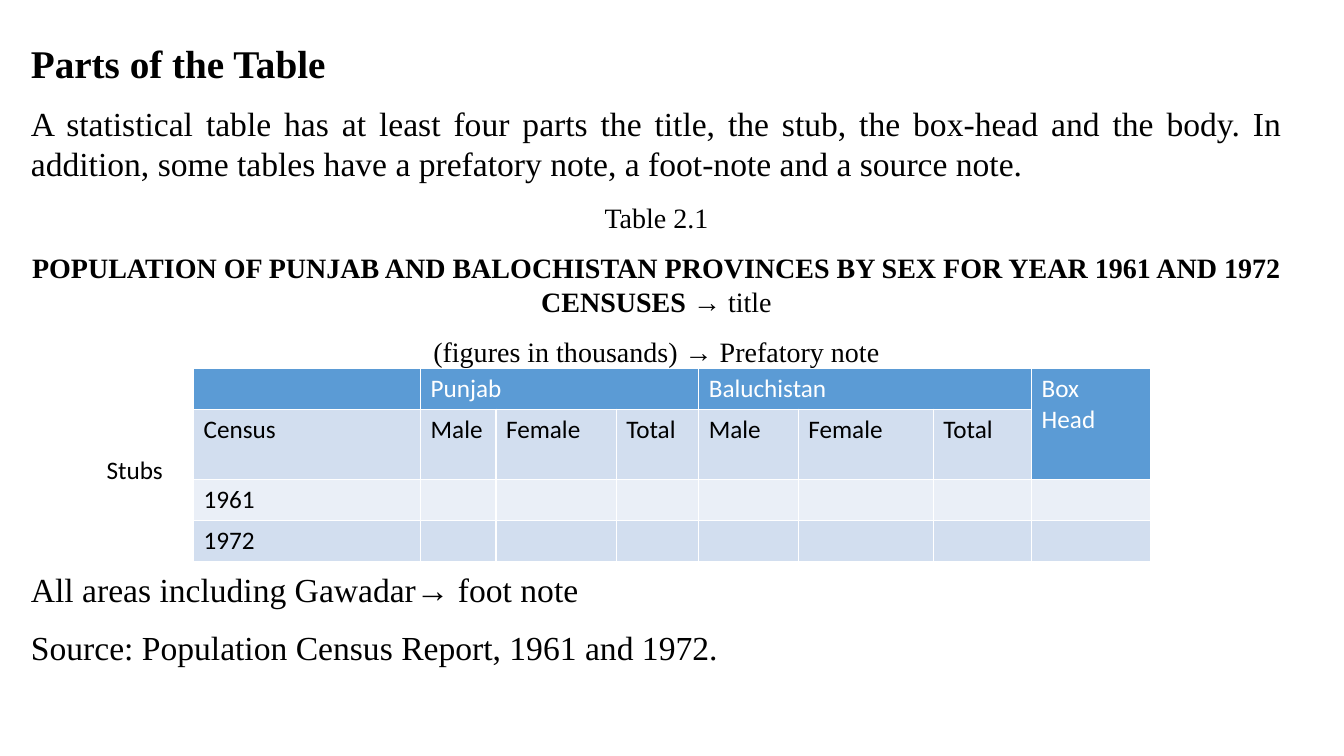
from pptx import Presentation
from pptx.dml.color import RGBColor
from pptx.enum.text import PP_ALIGN
from pptx.util import Cm, Pt

LEFT, CENTER, JUSTIFY = PP_ALIGN.LEFT, PP_ALIGN.CENTER, PP_ALIGN.JUSTIFY
BLACK = RGBColor(0x00, 0x00, 0x00)
WHITE = RGBColor(0xFF, 0xFF, 0xFF)
BLUE = RGBColor(0x5B, 0x9B, 0xD5)
BAND_DARK = RGBColor(0xD2, 0xDE, 0xEF)
BAND_LIGHT = RGBColor(0xEA, 0xEF, 0xF7)
SERIF, SANS = "Times New Roman", "Calibri"

COLUMN_WIDTHS = [5.72, 1.9, 3.03, 2.08, 2.51, 3.4, 2.48, 3.0]
ROW_HEIGHT = 1.03
SEXES = ["Male", "Female", "Total"]
CENSUS_ROWS = [
    ["", "Punjab", "", "", "Baluchistan", "", "", "Box\nHead"],
    ["Census", *SEXES, *SEXES, ""],
    ["1961"] + [""] * 7,
    ["1972"] + [""] * 7,
]
ROW_FILLS = [BLUE, BAND_DARK, BAND_LIGHT, BAND_DARK]
MERGES = [((0, 1), (0, 3)), ((0, 4), (0, 6)), ((0, 7), (1, 7))]


def add_run(p, text, font=SERIF, size=24, color=BLACK, bold=False):
    r = p.add_run()
    r.text = text
    r.font.name, r.font.size, r.font.bold = font, Pt(size), bold
    r.font.color.rgb = color


class SlideBuilder:
    def __init__(self, s, gap=6):
        self.s = s
        self.gap = Pt(gap)

    def text(self, x, y, w, h, paragraphs):
        """Each paragraph is (alignment, [(text, run format), ...])."""
        sp = self.s.shapes.add_textbox(Cm(x), Cm(y), Cm(w), Cm(h))
        tf = sp.text_frame
        tf.word_wrap = True
        for i, (align, runs) in enumerate(paragraphs):
            p = tf.add_paragraph() if i else tf.paragraphs[0]
            p.alignment = align
            p.space_before = self.gap if i else Pt(0)
            p.space_after = self.gap
            for text, style in runs:
                add_run(p, text, **style)

    def label(self, x, y, w, h, text):
        sp = self.s.shapes.add_textbox(Cm(x), Cm(y), Cm(w), Cm(h))
        sp.text_frame.word_wrap = True
        add_run(sp.text_frame.paragraphs[0], text, font=SANS, size=18)

    def table(self, x, y, widths, row_height, rows, fills, merges):
        table = self.s.shapes.add_table(
            len(rows), len(widths), Cm(x), Cm(y),
            Cm(sum(widths)), Cm(row_height * len(rows))).table
        for column, width in zip(table.columns, widths):
            column.width = Cm(width)
        for i, (row, fill) in enumerate(zip(rows, fills)):
            table.rows[i].height = Cm(row_height)
            for j, text in enumerate(row):
                cell = table.cell(i, j)
                cell.fill.solid()
                cell.fill.fore_color.rgb = fill
                if text:
                    self.fill_cell(cell, text, BLACK if i else WHITE)
        for start, end in merges:
            table.cell(*start).merge(table.cell(*end))

    def fill_cell(self, cell, text, color):
        tf = cell.text_frame
        for i, line in enumerate(text.split("\n")):
            p = tf.add_paragraph() if i else tf.paragraphs[0]
            add_run(p, line, font=SANS, size=18, color=color)


def main():
    prs = Presentation()
    prs.slide_width, prs.slide_height = Cm(33.87), Cm(19.05)
    slide = SlideBuilder(prs.slides.add_slide(prs.slide_layouts[6]))

    caption = {"size": 20}
    slide.text(0.53, 0.86, 32.03, 11, [
        (JUSTIFY, [("Parts of the Table", {"size": 28, "bold": True})]),
        (JUSTIFY, [("A statistical table has at least four parts the title, the stub, "
                    "the box-head and the body. In addition, some tables have a "
                    "prefatory note, a foot-note and a source note.", {})]),
        (CENTER, [("Table 2.1", caption)]),
        (CENTER, [("POPULATION OF PUNJAB AND BALOCHISTAN PROVINCES BY SEX "
                   "FOR YEAR 1961 AND 1972 CENSUSES", {"size": 20, "bold": True}),
                  (" → title", caption)]),
        (CENTER, [("(figures in thousands) → Prefatory note", caption)]),
    ])
    slide.table(4.88, 9.28, COLUMN_WIDTHS, ROW_HEIGHT, CENSUS_ROWS, ROW_FILLS, MERGES)
    slide.text(0.53, 14.22, 32.82, 2.74, [
        (LEFT, [("All areas including Gawadar→ foot note", {})]),
        (LEFT, [("Source: Population Census Report, 1961 and 1972.", {})]),
    ])
    slide.label(2.44, 11.33, 3.15, 1.02, "Stubs")
    prs.save("out.pptx")


if __name__ == "__main__":
    main()
